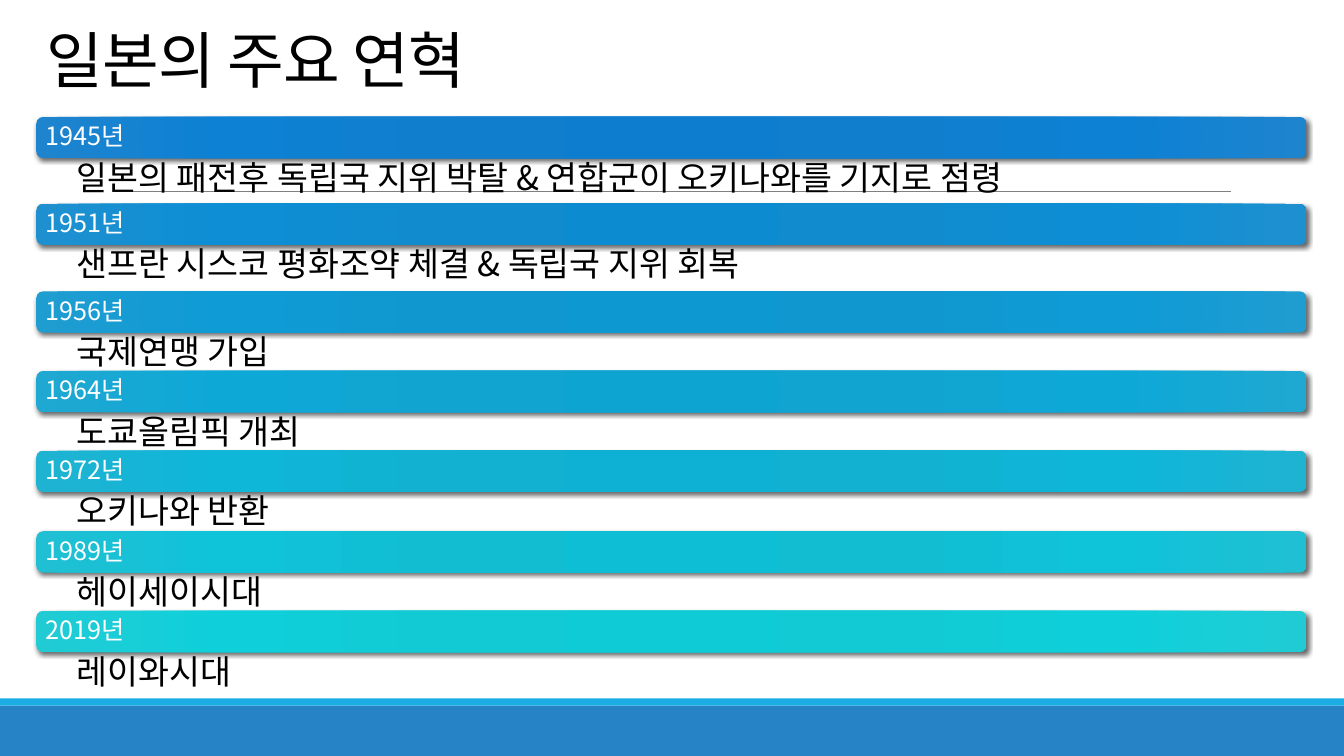
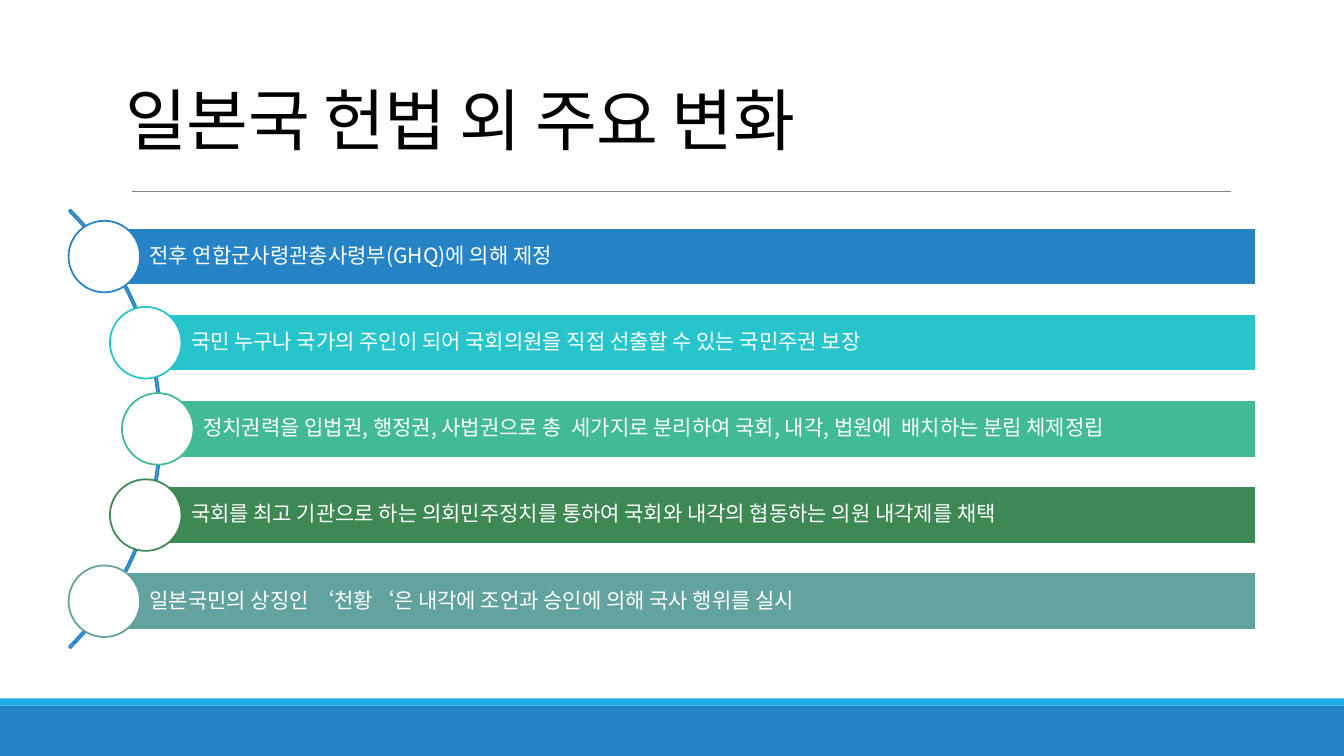
from dataclasses import dataclass

from lxml import etree
from pptx import Presentation
from pptx.dml.color import RGBColor
from pptx.enum.shapes import MSO_CONNECTOR, MSO_SHAPE
from pptx.enum.text import MSO_ANCHOR
from pptx.oxml.ns import qn
from pptx.util import Pt

RECT = MSO_SHAPE.RECTANGLE
ROUND = MSO_SHAPE.ROUNDED_RECTANGLE
OVAL = MSO_SHAPE.OVAL
ARC = MSO_SHAPE.BLOCK_ARC
LINE = MSO_CONNECTOR.STRAIGHT
TOP, MID, BASE = MSO_ANCHOR.TOP, MSO_ANCHOR.MIDDLE, MSO_ANCHOR.BOTTOM

PX = 9144  # 100 px to the inch
WIDE, HIGH = 1333, 750


@dataclass(frozen=True)
class Theme:
    font: str = "Noto Sans CJK KR"
    ink: str = "000000"
    white: str = "FFFFFF"
    rule: str = "808080"
    band: str = "2683C6"
    strip: str = "1CADE4"
    # gradient stops: place, colour of first bar, colour of last bar
    stops: tuple = (
        (0, "0D7ECF", "0ECBD5"),
        (34, "117ECD", "12CAD3"),
        (70, "0D81D4", "0FD0DA"),
        (100, "1E84CE", "20CBD4"),
    )
    rows: tuple = ("2683C6", "28C4CC", "42BA97", "3E8853", "62A39F")
    year: int = 18
    note: int = 24
    point: int = 15
    thin: float = 0.5
    edge: float = 1.25


T = Theme()

EVENTS = (  # year, note, note height
    ("1945년", "일본의 패전후 독립국 지위 박탈 & 연합군이 오키나와를 기지로 점령", 45),
    ("1951년", "샌프란 시스코 평화조약 체결 & 독립국 지위 회복", 46),
    ("1956년", "국제연맹 가입", 38),
    ("1964년", "도쿄올림픽 개최", 38),
    ("1972년", "오키나와 반환", 39),
    ("1989년", "헤이세이시대", 38),
    ("2019년", "레이와시대", 38),
)

POINTS = (  # text, inset of the bar
    ("전후 연합군사령관총사령부(GHQ)에 의해 제정", 0),
    ("국민 누구나 국가의 주인이 되어 국회의원을 직접 선출할 수 있는 국민주권 보장", 41),
    ("정치권력을 입법권, 행정권, 사법권으로 총  세가지로 분리하여 국회, 내각, "
     "법원에  배치하는 분립 체제정립", 53),
    ("국회를 최고 기관으로 하는 의회민주정치를 통하여 국회와 내각의 협동하는 의원 내각제를 채택", 41),
    ("일본국민의 상징인 ‘천황‘은 내각에 조언과 승인에 의해 국사 행위를 실시", 0),
)


# Shared helpers
def emu(*vals):
    return [round(v * PX) for v in vals]


def rgb(tone):
    return RGBColor.from_string(tone)


def style(item, **vals):
    for name, val in vals.items():
        setattr(item, name, val)


def sub(node, tag, **attrs):
    return etree.SubElement(node, qn(tag), {k: str(v) for k, v in attrs.items()})


def stroke(line, tone, width):
    line.color.rgb = rgb(tone)
    line.width = Pt(width)


def shape(slide, kind, box, fill=None, line=None):
    part = slide.shapes.add_shape(kind, *emu(*box))
    part.shadow.inherit = False
    if fill:
        part.fill.solid()
        part.fill.fore_color.rgb = rgb(fill)
    else:
        part.fill.background()
    if line:
        stroke(part.line, line, T.edge)
    else:
        part.line.fill.background()
    return part


def write(part, text, size, tone, pad, anchor=MID, gap=0.9, track=0, hang=0):
    left, top, right, base = emu(*pad)
    frame = part.text_frame
    style(frame, word_wrap=True, vertical_anchor=anchor, margin_left=left,
          margin_top=top, margin_right=right, margin_bottom=base)
    para = frame.paragraphs[0]
    para.line_spacing = gap
    props = para._p.get_or_add_pPr()
    props.set("algn", "l")
    if hang:
        props.set("marL", str(hang * PX))
        props.set("indent", str(-hang * PX))
    run = para.add_run()
    run.text = text
    style(run.font, name=T.font, size=Pt(size))
    run.font.color.rgb = rgb(tone)
    mark = run._r.get_or_add_rPr()
    sub(mark, "a:ea", typeface=T.font)
    if track:
        mark.set("spc", str(track))


def label(slide, box, *args, **vals):
    write(slide.shapes.add_textbox(*emu(*box)), *args, **vals)


def base(deck, title, box, size):
    """Blank slide with bands, rule and title."""
    slide = deck.slides.add_slide(deck.slide_layouts[6])
    shape(slide, RECT, (0, 700, WIDE, 50), T.band)
    shape(slide, RECT, (0, 693, WIDE, 7), T.strip)
    rule = slide.shapes.add_connector(LINE, *emu(131, 190, 1221, 190))
    stroke(rule.line, T.rule, T.thin)
    sub(rule._element.spPr, "a:effectLst")
    label(slide, box, title, size, T.ink, (10, 5, 10, 5), BASE, 0.85, -50)
    return slide


# Timeline
def blend(first, last, part):
    pairs = zip(bytes.fromhex(first), bytes.fromhex(last))
    return "".join(f"{round(a + (b - a) * part):02X}" for a, b in pairs)


def glow(part, share):
    """Radial gradient and soft shadow of a year bar."""
    part.fill.gradient()
    props = part._element.spPr
    grad = props.find(qn("a:gradFill"))
    for node in list(grad):
        grad.remove(node)
    stops = sub(grad, "a:gsLst")
    for pos, first, last in T.stops:
        stop = sub(stops, "a:gs", pos=pos * 1000)
        sub(stop, "a:srgbClr", val=blend(first, last, share))
    ring = sub(grad, "a:path", path="circle")
    sub(ring, "a:fillToRect", **dict.fromkeys("ltrb", 100000))
    shade = sub(props.find(qn("a:effectLst")), "a:outerShdw", blurRad=Pt(3),
                dist=Pt(2), dir=45 * 60000, algn="tl", rotWithShape=0)
    tone = sub(shade, "a:srgbClr", val=T.ink)
    sub(tone, "a:alpha", val=60000)


def years(slide, box):
    left, top, wide, _ = box
    bar = 41
    for i, (year, note, high) in enumerate(EVENTS):
        part = shape(slide, ROUND, (left, top, wide, bar))
        glow(part, i / (len(EVENTS) - 1))
        # the label box sits just inside the rounded corners
        label(slide, (left + 2, top + 2, wide - 4, bar - 4), year,
              T.year, T.white, (7, 7, 7, 7))
        top += bar
        label(slide, (left, top, wide, high), note, T.note, T.ink,
              (40, 3, 19, 3), TOP, hang=25)
        top += high


# List along an arc
def points(slide, box):
    left, top, wide, high = box
    bar, dot, ring = 57, 71, 615
    step = (high - dot) / (len(POINTS) - 1)
    curve = shape(slide, ARC, (left - 523, top + (high - ring) / 2, ring, ring),
                  line=T.band)
    for i, val in enumerate((189, 27, 0.0035)):
        curve.adjustments[i] = val
    for i, ((text, inset), tone) in enumerate(zip(POINTS, T.rows)):
        x, y = left + inset, top + i * step
        start = x + dot / 2
        part = shape(slide, RECT,
                     (start, y + (dot - bar) / 2, left + wide - start, bar),
                     tone, T.white)
        write(part, text, T.point, T.white, (45, 4, 4, 4))
        shape(slide, OVAL, (x, y, dot, dot), T.white, tone)


def main():
    deck = Presentation()
    style(deck, slide_width=WIDE * PX, slide_height=HIGH * PX)
    slide = base(deck, "일본의 주요 연혁", (36, 20, 573, 80), 44)
    years(slide, (36, 116, 1260, 570))
    slide = base(deck, "일본국 헌법 외 주요 변화", (115, 84, 1083, 79), 48)
    points(slide, (68, 219, 1178, 413))
    deck.save("out.pptx")


if __name__ == "__main__":
    main()
